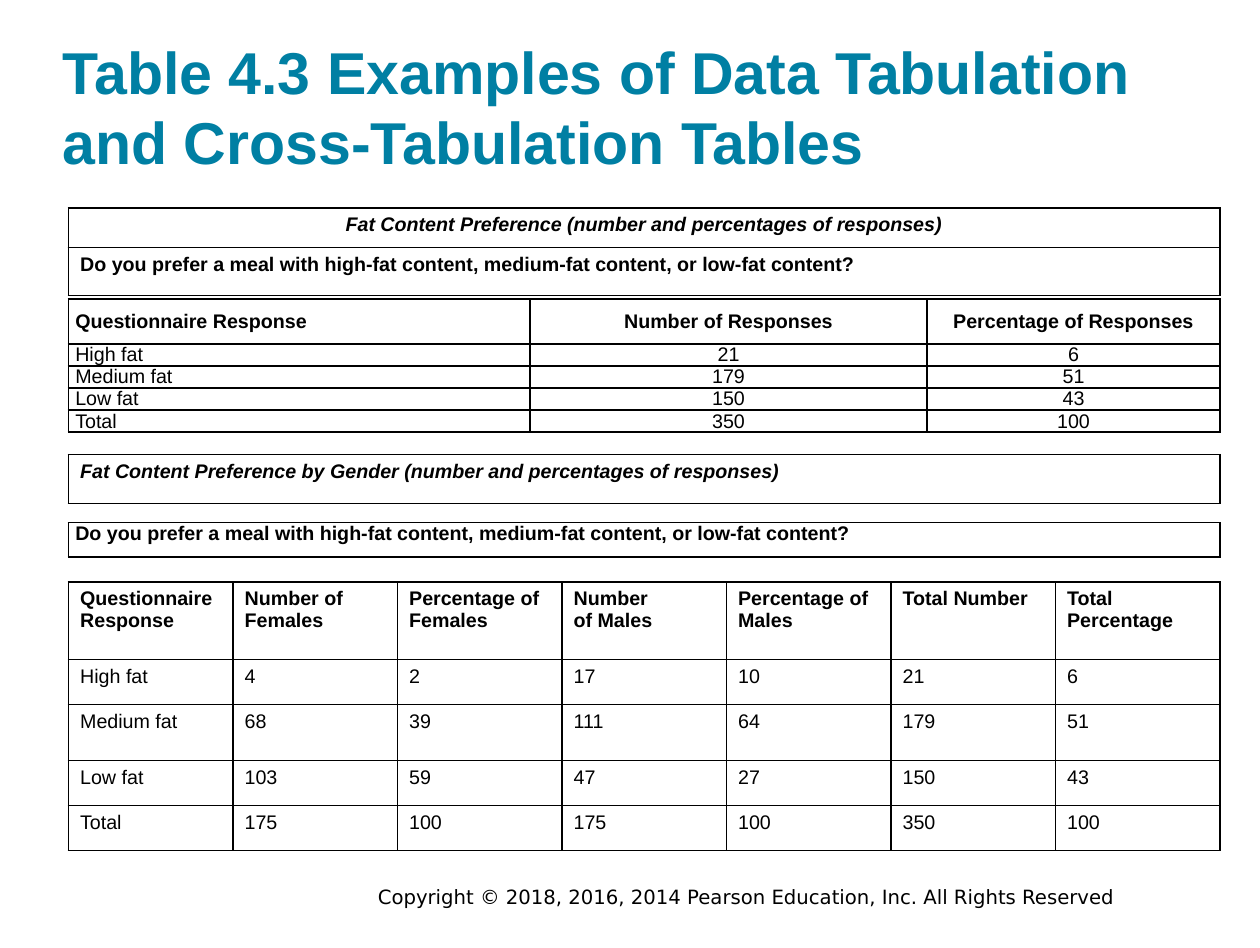
from lxml.etree import SubElement
from pptx import Presentation
from pptx.dml.color import RGBColor
from pptx.enum.text import MSO_ANCHOR as Anchor, MSO_AUTO_SIZE as AutoSize, PP_ALIGN as Align
from pptx.oxml.ns import qn
from pptx.util import Cm, Pt

TEAL = RGBColor(0x00, 0x7F, 0xA3)
BLACK = RGBColor(0x00, 0x00, 0x00)

TABLE_LEFT, TABLE_WIDTH = 1.47, 24.77
QUESTION = "Do you prefer a meal with high-fat content, medium-fat content, or low-fat content?"


class SlideBuilder:
    """Holds the text style and the current slide."""
    font_name = "Arial"
    body_size = 12

    def __init__(self, prs):
        self.slide = prs.slides.add_slide(prs.slide_layouts[5])

    def style(self, frame, size=body_size, color=BLACK, bold=False, italic=False,
              align=Align.LEFT, name=font_name):
        for paragraph in frame.paragraphs:
            paragraph.alignment = align
            font = paragraph.font
            font.name, font.size, font.bold, font.italic = name, Pt(size), bold, italic
            font.color.rgb = color

    def title(self, text, left, top, width, height):
        heading = self.slide.shapes.title
        heading.left, heading.top = Cm(left), Cm(top)
        heading.width, heading.height = Cm(width), Cm(height)
        frame = heading.text_frame
        frame.text = text
        frame.word_wrap, frame.auto_size = True, AutoSize.NONE
        frame.vertical_anchor = Anchor.MIDDLE
        frame.margin_left = frame.margin_right = frame.margin_top = frame.margin_bottom = 0
        self.style(frame, size=36, color=TEAL, bold=True)

    def footer(self, text, left, top, width, height):
        box = self.slide.shapes.add_textbox(Cm(left), Cm(top), Cm(width), Cm(height))
        box.text_frame.word_wrap = True
        box.text_frame.text = text
        self.style(box.text_frame, align=Align.RIGHT, name="DejaVu Sans")

    def border(self, cell):
        properties = cell._tc.get_or_add_tcPr()
        for side in ("a:lnL", "a:lnR", "a:lnT", "a:lnB"):
            line = SubElement(properties, qn(side), w=str(Pt(1)))
            fill = SubElement(line, qn("a:solidFill"))
            SubElement(fill, qn("a:srgbClr"), val=str(BLACK))
        cell.fill.background()

    def table(self, rows, top, heights, widths=(TABLE_WIDTH,), aligns=None,
              compact=False, italic=False, anchor=Anchor.TOP):
        """Draw a bordered table whose first row is bold."""
        aligns = aligns or [Align.LEFT] * len(widths)
        table = self.slide.shapes.add_table(
            len(rows), len(widths), Cm(TABLE_LEFT), Cm(top),
            Cm(sum(widths)), Cm(sum(heights))).table
        table.first_row = table.horz_banding = False
        for column, width in zip(table.columns, widths):
            column.width = Cm(width)
        for r, (values, height) in enumerate(zip(rows, heights)):
            table.rows[r].height = Cm(height)
            for c, value in enumerate(values):
                cell = table.cell(r, c)
                cell.text = str(value)
                cell.vertical_anchor = anchor
                if compact:
                    cell.margin_left = cell.margin_right = Cm(0.15)
                    cell.margin_top = cell.margin_bottom = 0
                self.style(cell.text_frame, bold=r == 0, italic=italic, align=aligns[c])
                self.border(cell)


def main():
    prs = Presentation()
    prs.slide_width, prs.slide_height = Cm(27.1), Cm(20.4)
    page = SlideBuilder(prs)

    page.title("Table 4.3 Examples of Data Tabulation and Cross-Tabulation Tables",
               1.35, 0.69, 24.38, 3.18)

    # Simple tabulation
    page.table([["Fat Content Preference (number and percentages of responses)"]],
               4.48, [0.84], aligns=[Align.CENTER], italic=True)
    page.table([[QUESTION]], 5.32, [1.04])
    responses = [
        ["Questionnaire Response", "Number of Responses", "Percentage of Responses"],
        ["High fat", 21, 6],
        ["Medium fat", 179, 51],
        ["Low fat", 150, 43],
        ["Total", 350, 100],
    ]
    page.table(responses, 6.43, [0.97] + [0.47] * 4, widths=(9.93, 8.54, 6.3),
               aligns=[Align.LEFT, Align.CENTER, Align.CENTER],
               compact=True, anchor=Anchor.MIDDLE)

    # Cross-tabulation by gender
    page.table([["Fat Content Preference by Gender (number and percentages of responses)"]],
               9.78, [1.06], italic=True)
    page.table([[QUESTION]], 11.25, [0.74], compact=True)
    by_gender = [
        ["Questionnaire Response", "Number of Females", "Percentage of Females",
         "Number\vof Males", "Percentage of Males", "Total Number", "Total Percentage"],
        ["High fat", 4, 2, 17, 10, 21, 6],
        ["Medium fat", 68, 39, 111, 64, 179, 51],
        ["Low fat", 103, 59, 47, 27, 150, 43],
        ["Total", 175, 100, 175, 100, 350, 100],
    ]
    page.table(by_gender, 12.52, [1.67, 0.97, 1.2, 0.97, 0.97],
               widths=[TABLE_WIDTH / 7] * 7)

    # Copyright line
    page.footer("Copyright © 2018, 2016, 2014 Pearson Education, Inc. All Rights Reserved",
                4.34, 18.92, 19.89, 0.76)

    prs.save("out.pptx")


if __name__ == "__main__":
    main()
